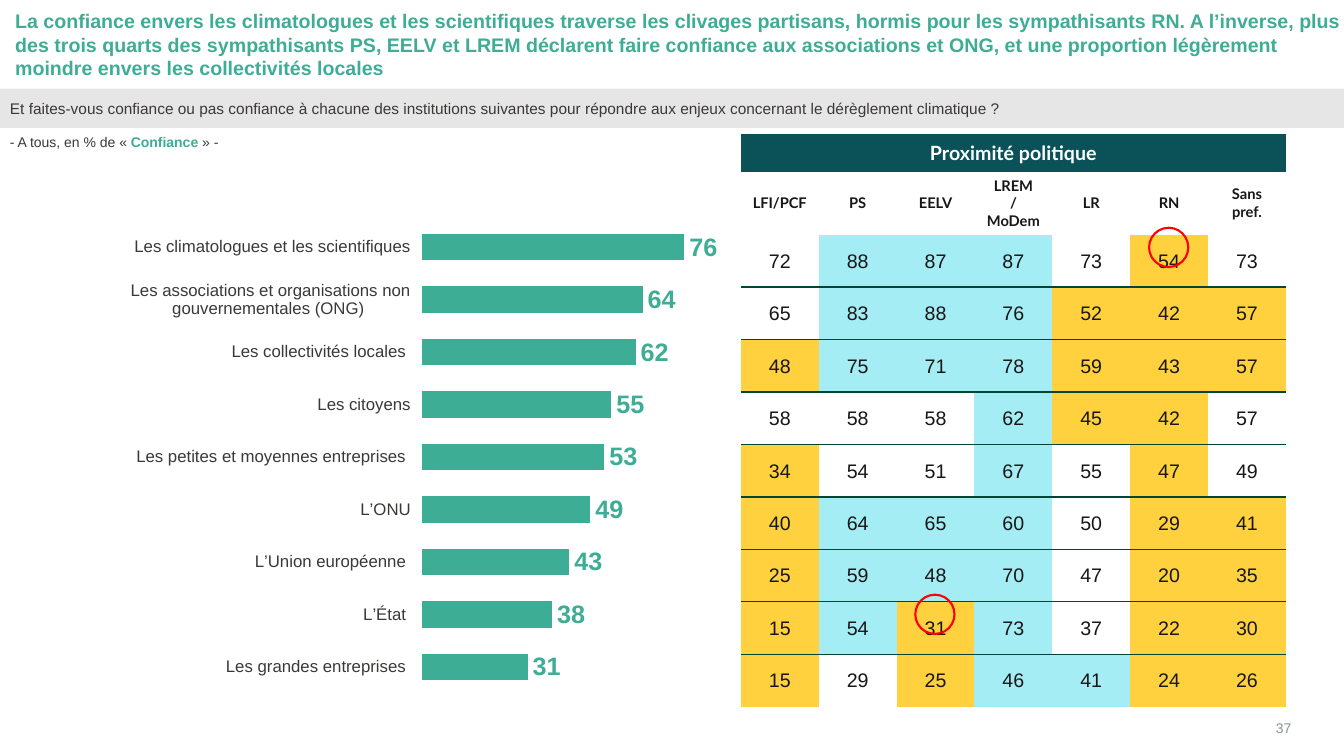
from lxml import etree
from pptx import Presentation
from pptx.chart.data import CategoryChartData
from pptx.dml.color import RGBColor
from pptx.enum import chart as charts, shapes, text
from pptx.oxml import parse_xml
from pptx.oxml.ns import nsdecls, qn
from pptx.util import Pt

GREEN, DARK, GREY, RED, WHITE = "3EAD95", "014537", "3B3838", "FF0000", "FFFFFF"
FILLS = {"+": "A4EDF4", "-": "FFD13F"}
NO_STYLE = "{2D5ABB26-0587-4C30-8999-92F81FD0307C}"
TITLE = ("La confiance envers les climatologues et les scientifiques traverse les clivages "
         "partisans, hormis pour les sympathisants RN. A l’inverse, plus des trois quarts des "
         "sympathisants PS, EELV et LREM déclarent faire confiance aux associations et ONG, "
         "et une proportion légèrement moindre envers les collectivités locales")
QUESTION = ("Et faites-vous confiance ou pas confiance à chacune des institutions suivantes "
            "pour répondre aux enjeux concernant le dérèglement climatique ?")
TRUST = [
    ("Les climatologues et les scientifiques", 76),
    ("Les associations et organisations non gouvernementales (ONG) ", 64),
    ("Les collectivités locales ", 62),
    ("Les citoyens", 55),
    ("Les petites et moyennes entreprises ", 53),
    ("L’ONU", 49),
    ("L’Union européenne ", 43),
    ("L’État ", 38),
    ("Les grandes entreprises ", 31),
]
PARTIES = ["LFI/PCF", "PS", "EELV", "LREM\v/MoDem", "LR", "RN", "Sans pref."]
# "+" marks a score above average, "-" a score below it
SCORES = [
    "72 88+ 87+ 87+ 73 54- 73",
    "65 83+ 88+ 76+ 52- 42- 57-",
    "48- 75+ 71+ 78+ 59- 43- 57-",
    "58 58 58 62+ 45- 42- 57",
    "34- 54 51 67+ 55 47- 49",
    "40- 64+ 65+ 60+ 50 29- 41-",
    "25- 59+ 48+ 70+ 47 20- 35-",
    "15- 54+ 31- 73+ 37 22- 30-",
    "15- 29 25- 46+ 41+ 24- 26-",
]


def rgb(color):
    return RGBColor.from_string(color)


def set_font(font, size, color, bold=False, name="Arial"):
    font.size, font.bold, font.name = Pt(size), bold, name
    font.color.rgb = rgb(color)


def write(tf, runs, size, align=text.PP_ALIGN.LEFT, anchor=text.MSO_ANCHOR.TOP,
          inset=(7.2, 3.6, 7.2, 3.6), name="Arial"):
    """Fill a text frame with one paragraph of (words, color, bold) runs."""
    tf.word_wrap, tf.vertical_anchor = True, anchor
    (tf.margin_left, tf.margin_top,
     tf.margin_right, tf.margin_bottom) = [Pt(side) for side in inset]
    p = tf.paragraphs[0]
    p.alignment = align
    for words, color, bold in runs:
        for i, line in enumerate(words.split("\v")):
            if i:
                p.add_line_break()
            r = p.add_run()
            r.text = line
            set_font(r.font, size, color, bold, name)
    return p


def add_shape(slide, box, kind=shapes.MSO_SHAPE.RECTANGLE, fill=None, line=None):
    sp = slide.shapes.add_shape(kind, *[Pt(v) for v in box])
    sp.shadow.inherit = False
    if fill:
        sp.fill.solid()
        sp.fill.fore_color.rgb = rgb(fill)
    else:
        sp.fill.background()
    if line:
        sp.line.color.rgb = rgb(line)
        sp.line.width = Pt(1.5)
    else:
        sp.line.fill.background()
    return sp


def add_title(slide, box):
    sp = add_shape(slide, box, fill=WHITE)
    color = sp.fill._xPr.find(qn("a:solidFill"))[0]
    etree.SubElement(color, qn("a:alpha")).set("val", "30000")
    p = write(sp.text_frame, [(TITLE, GREEN, True)], 14, inset=(0, 0, 0, 0))
    p._p.get_or_add_pPr().set("marL", str(Pt(7.2)))


def add_question(slide, box):
    sp = add_shape(slide, box, fill="E6E6E6")
    write(sp.text_frame, [(QUESTION, GREY, False)], 11, text.PP_ALIGN.JUSTIFY,
          text.MSO_ANCHOR.MIDDLE, (7.2, 7.2, 14.4, 7.2))


def add_text(slide, box, runs, size, **layout):
    sp = slide.shapes.add_textbox(*[Pt(v) for v in box])
    write(sp.text_frame, runs, size, **layout)


def place_plot(chart, x, y, w, h):
    """Fix the inner plot area as fractions of the chart."""
    plot_area = chart._chartSpace.chart.plotArea
    for old in plot_area.findall(qn("c:layout")):
        plot_area.remove(old)
    plot_area.insert(0, parse_xml(
        f'<c:layout {nsdecls("c")}><c:manualLayout><c:layoutTarget val="inner"/>'
        '<c:xMode val="edge"/><c:yMode val="edge"/>'
        f'<c:x val="{x}"/><c:y val="{y}"/><c:w val="{w}"/><c:h val="{h}"/>'
        '</c:manualLayout></c:layout>'))


def add_trust_chart(slide, box):
    data = CategoryChartData()
    data.categories = [name for name, _ in TRUST]
    data.add_series("Confiance", [value for _, value in TRUST])
    chart = slide.shapes.add_chart(charts.XL_CHART_TYPE.BAR_CLUSTERED,
                                   *[Pt(v) for v in box], data).chart
    chart.has_legend = chart.has_title = False
    set_font(chart.font, 10, DARK)
    place_plot(chart, 0.514, 0.128, 0.355, 0.819)

    names, values = chart.category_axis, chart.value_axis
    names.reverse_order = True
    names.has_major_gridlines = values.has_major_gridlines = False
    names.format.line.fill.background()
    set_font(names.tick_labels.font, 12, GREY)
    values.minimum_scale, values.maximum_scale = 0, 80
    values.visible = False

    plot = chart.plots[0]
    plot.gap_width, plot.vary_by_categories = 85, False
    bars = plot.series[0]
    bars.format.fill.solid()
    bars.format.fill.fore_color.rgb = rgb(GREEN)
    bars.format.line.color.rgb = rgb(WHITE)
    bars.format.line.width = Pt(1.5)
    labels = bars.data_labels
    labels.show_value = True
    labels.position = charts.XL_LABEL_POSITION.OUTSIDE_END
    set_font(labels.font, 18, GREEN, True)


def fill_cell(cell, words, size, color, bold=False, name="Arial", fill=None,
              top_line=False, inset=(7.2, 3.6, 7.2, 3.6)):
    write(cell.text_frame, [(words, color, bold)], size, text.PP_ALIGN.CENTER, name=name)
    cell.vertical_anchor = text.MSO_ANCHOR.MIDDLE
    (cell.margin_left, cell.margin_top,
     cell.margin_right, cell.margin_bottom) = [Pt(side) for side in inset]
    if top_line:
        cell._tc.get_or_add_tcPr().append(parse_xml(
            f'<a:lnT {nsdecls("a")} w="{Pt(1)}"><a:solidFill><a:srgbClr val="{DARK}"/>'
            '</a:solidFill></a:lnT>'))
    if fill:
        cell.fill.solid()
        cell.fill.fore_color.rgb = rgb(fill)
    else:
        cell.fill.background()


def add_party_table(slide, box):
    left, top, width, height = [Pt(v) for v in box]
    table = slide.shapes.add_table(len(SCORES) + 2, len(PARTIES),
                                   left, top, width, height).table
    table.first_row = table.horz_banding = False
    table._tbl.tblPr.find(qn("a:tableStyleId")).text = NO_STYLE
    for column in table.columns:
        column.width = width // len(PARTIES)
    for row, size in zip(table.rows, [26.6, 36] + [37.5] * len(SCORES)):
        row.height = Pt(size)

    table.cell(0, 0).merge(table.cell(0, len(PARTIES) - 1))
    fill_cell(table.cell(0, 0), "Proximité politique", 14, WHITE, True, "Lato", "0B5258")
    for c, party in enumerate(PARTIES):
        fill_cell(table.cell(1, c), party, 10.5, "181717", True, "Lato")
    for r, scores in enumerate(SCORES):
        for c, score in enumerate(scores.split()):
            fill_cell(table.cell(r + 2, c), score.rstrip("+-"), 14, "181717",
                      fill=FILLS.get(score[-1]), top_line=r > 0, inset=(0.7, 0.7, 0.7, 0))


def main():
    prs = Presentation()
    prs.slide_width, prs.slide_height = Pt(960), Pt(540)
    slide = prs.slides.add_slide(prs.slide_layouts[6])
    add_text(slide, (880, 509, 42.5, 17.3), [("37", "8C9491", False)], 10,
             align=text.PP_ALIGN.RIGHT, anchor=text.MSO_ANCHOR.BOTTOM, inset=(0, 0, 0, 0))
    add_text(slide, (0, 91.5, 960, 28),
             [("- A tous, en % de «\u00a0", GREY, False), ("Confiance", GREEN, True),
              ("\u00a0» -", GREY, False)], 10)
    add_trust_chart(slide, (12.2, 105.1, 561, 412))
    add_party_table(slide, (529.2, 96, 389.5, 400))
    add_question(slide, (0, 63.4, 960, 28))
    add_title(slide, (3.6, 6.5, 960, 51))
    for x, y in [(820.8, 162.7), (653.8, 424.8)]:
        add_shape(slide, (x, y, 28, 28), shapes.MSO_SHAPE.OVAL, line=RED)
    prs.save("out.pptx")


if __name__ == "__main__":
    main()
